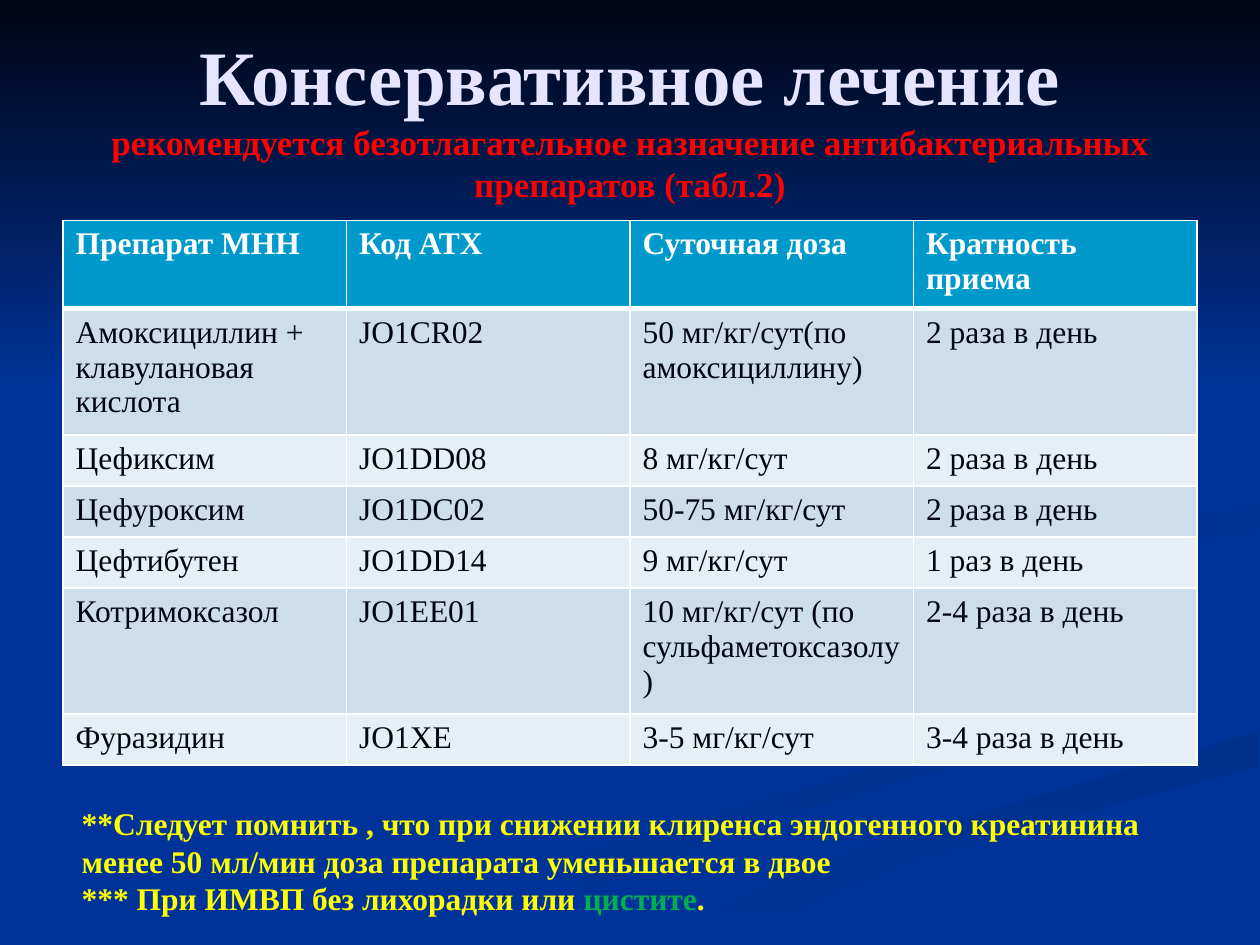
"""Build a slide on conservative treatment with a table of antibacterial drugs."""
from typing import NamedTuple

from lxml import etree
from pptx import Presentation
from pptx.dml.color import RGBColor
from pptx.enum.shapes import MSO_SHAPE
from pptx.enum.text import MSO_ANCHOR, MSO_AUTO_SIZE, PP_ALIGN
from pptx.oxml.ns import qn
from pptx.util import Pt

RECTANGLE = MSO_SHAPE.RECTANGLE
MIDDLE = MSO_ANCHOR.MIDDLE
CENTER = PP_ALIGN.CENTER
GROW = MSO_AUTO_SIZE.SHAPE_TO_FIT_TEXT

FONT = "Times New Roman"
NAVY = RGBColor.from_string("003399")
NAVY_SOFT = RGBColor.from_string("003193")
NAVY_DIM = RGBColor.from_string("003091")
NAVY_DEEP = RGBColor.from_string("002F8C")
INK = RGBColor.from_string("000514")
LAVENDER = RGBColor.from_string("E5E5FF")
RED = RGBColor.from_string("FF0000")
YELLOW = RGBColor.from_string("FFFF00")
GREEN = RGBColor.from_string("00B050")
WHITE = RGBColor.from_string("FFFFFF")
HEADER_BLUE = RGBColor.from_string("0099CC")
BAND_FILLS = (RGBColor.from_string("E7EFF6"), RGBColor.from_string("CCDEEC"))


class Ribbon(NamedTuple):
    """A background ribbon: gradient colours, clockwise angle and outline."""
    start: RGBColor
    end: RGBColor
    angle: int
    outline: list[tuple[int, int]]


class Span(NamedTuple):
    """A piece of bold text with its size and colour."""
    text: str
    size: int
    color: RGBColor


RIBBONS = [
    Ribbon(NAVY, NAVY_SOFT, 0, [
        (562, 398), (414, 330), (566, 408), (492, 441), (300, 497), (216, 539),
        (260, 539), (428, 472), (570, 430)]),
    Ribbon(NAVY, NAVY_SOFT, 45, [
        (679, 410), (521, 334), (603, 386), (661, 418), (644, 436)]),
    Ribbon(NAVY_DEEP, NAVY, 90, [
        (362, 539), (411, 539), (520, 491), (719, 438), (719, 418), (501, 482)]),
    Ribbon(NAVY_DIM, NAVY, 45, [
        (562, 331), (595, 357), (588, 330), (719, 302), (719, 289), (612, 307)]),
    Ribbon(NAVY_DEEP, NAVY, 45, [
        (492, 310), (624, 276), (644, 248), (549, 168), (640, 241), (606, 272),
        (418, 325), (448, 360)]),
]

TITLE = [[Span("Консервативное лечение\v", 44, LAVENDER),
          Span("рекомендуется безотлагательное назначение антибактериальных "
               "препаратов (табл.2)", 20, RED)]]
NOTES = [[Span("**Следует помнить , что при снижении клиренса эндогенного креатинина "
               "менее 50 мл/мин доза препарата уменьшается в двое", 18, YELLOW)],
         [Span("*** При ИМВП без лихорадки или ", 18, YELLOW),
          Span("цистите", 18, GREEN), Span(".", 18, YELLOW)]]
DRUGS = [
    ("Препарат МНН", "Код АТХ", "Суточная доза", "Кратность приема"),
    ("Амоксициллин +\nклавулановая кислота", "JO1CR02",
     "50 мг/кг/сут(по амоксициллину)", "2 раза в день"),
    ("Цефиксим", "JO1DD08", "8 мг/кг/сут", "2 раза в день"),
    ("Цефуроксим", "JO1DC02", "50-75 мг/кг/сут", "2 раза в день"),
    ("Цефтибутен", "JO1DD14", "9 мг/кг/сут", "1 раз в день"),
    ("Котримоксазол", "JO1EE01", "10 мг/кг/сут (по сульфаметоксазолу)", "2-4 раза в день"),
    ("Фуразидин", "JO1XE", "3-5 мг/кг/сут", "3-4 раза в день"),
]
COLUMN_WIDTH = 162
ROW_HEIGHT = 29.2


def style_font(font, size: int, color: RGBColor, bold: bool) -> None:
    """Apply the slide's typeface with a size, colour and weight."""
    font.name = FONT
    font.size = Pt(size)
    font.bold = bold
    font.color.rgb = color


def paint(shape, start: RGBColor, end: RGBColor, angle: int) -> None:
    """Fill a shape with a two-colour gradient at a clockwise angle."""
    shape.shadow.inherit = False
    shape.line.fill.background()
    shape.fill.gradient()
    shape.fill.gradient_angle = (360 - angle) % 360
    for stop, color in zip(shape.fill.gradient_stops, (start, end)):
        stop.color.rgb = color


def draw_ribbon(slide, ribbon: Ribbon) -> None:
    """Draw one background ribbon."""
    builder = slide.shapes.build_freeform(*ribbon.outline[0], scale=Pt(1))
    builder.add_line_segments(ribbon.outline[1:], close=True)
    paint(builder.convert_to_shape(), ribbon.start, ribbon.end, ribbon.angle)


def add_text(slide, box: tuple[float, ...], paragraphs: list[list[Span]]):
    """Add a wrapping text box with bold spans and return it."""
    shape = slide.shapes.add_textbox(*map(Pt, box))
    frame = shape.text_frame
    frame.word_wrap = True
    for index, spans in enumerate(paragraphs):
        paragraph = frame.add_paragraph() if index else frame.paragraphs[0]
        paragraph.text = spans[0].text
        for span in spans[1:]:
            paragraph.add_run().text = span.text
        for run, span in zip(paragraph.runs, spans):
            style_font(run.font, span.size, span.color, True)
    return shape


def set_border(cell, side: str, width: float) -> None:
    """Give one side of a cell a solid white line."""
    properties = cell._tc.get_or_add_tcPr()
    line = etree.SubElement(properties, qn(f"a:ln{side}"), w=str(Pt(width)))
    fill = etree.SubElement(line, qn("a:solidFill"))
    etree.SubElement(fill, qn("a:srgbClr"), val=str(WHITE))


def draw_table(slide) -> None:
    """Draw the drug table with a header and banded rows."""
    rows, columns = len(DRUGS), len(DRUGS[0])
    table = slide.shapes.add_table(rows, columns, Pt(36), Pt(126), Pt(COLUMN_WIDTH * columns),
                                   Pt(ROW_HEIGHT * rows)).table
    for row_index, values in enumerate(DRUGS):
        header = row_index == 0
        for column_index, value in enumerate(values):
            cell = table.cell(row_index, column_index)
            cell.text_frame.text = value
            widths = {"L": 1, "R": 1, "T": 3 if row_index == 1 else 1, "B": 3 if header else 1}
            for side, width in widths.items():
                set_border(cell, side, width)
            cell.fill.solid()
            cell.fill.fore_color.rgb = HEADER_BLUE if header else BAND_FILLS[row_index % 2]
            for paragraph in cell.text_frame.paragraphs:
                for run in paragraph.runs:
                    style_font(run.font, 18, WHITE if header else INK, header)


def main() -> None:
    """Build and save the presentation."""
    presentation = Presentation()
    presentation.slide_width, presentation.slide_height = Pt(720), Pt(540)
    slide = presentation.slides.add_slide(presentation.slide_layouts[6])
    slide.background.fill.solid()
    slide.background.fill.fore_color.rgb = NAVY
    for ribbon in RIBBONS:
        draw_ribbon(slide, ribbon)
    sky = slide.shapes.add_shape(RECTANGLE, 0, 0, Pt(720), Pt(222))
    paint(sky, INK, NAVY, 90)
    title = add_text(slide, (36, 21.6, 648, 90), TITLE)
    title.text_frame.vertical_anchor = MIDDLE
    title.text_frame.paragraphs[0].alignment = CENTER
    draw_table(slide)
    notes = add_text(slide, (39.6, 455.8, 652.3, 72.7), NOTES)
    notes.text_frame.auto_size = GROW
    presentation.save("out.pptx")


if __name__ == "__main__":
    main()
